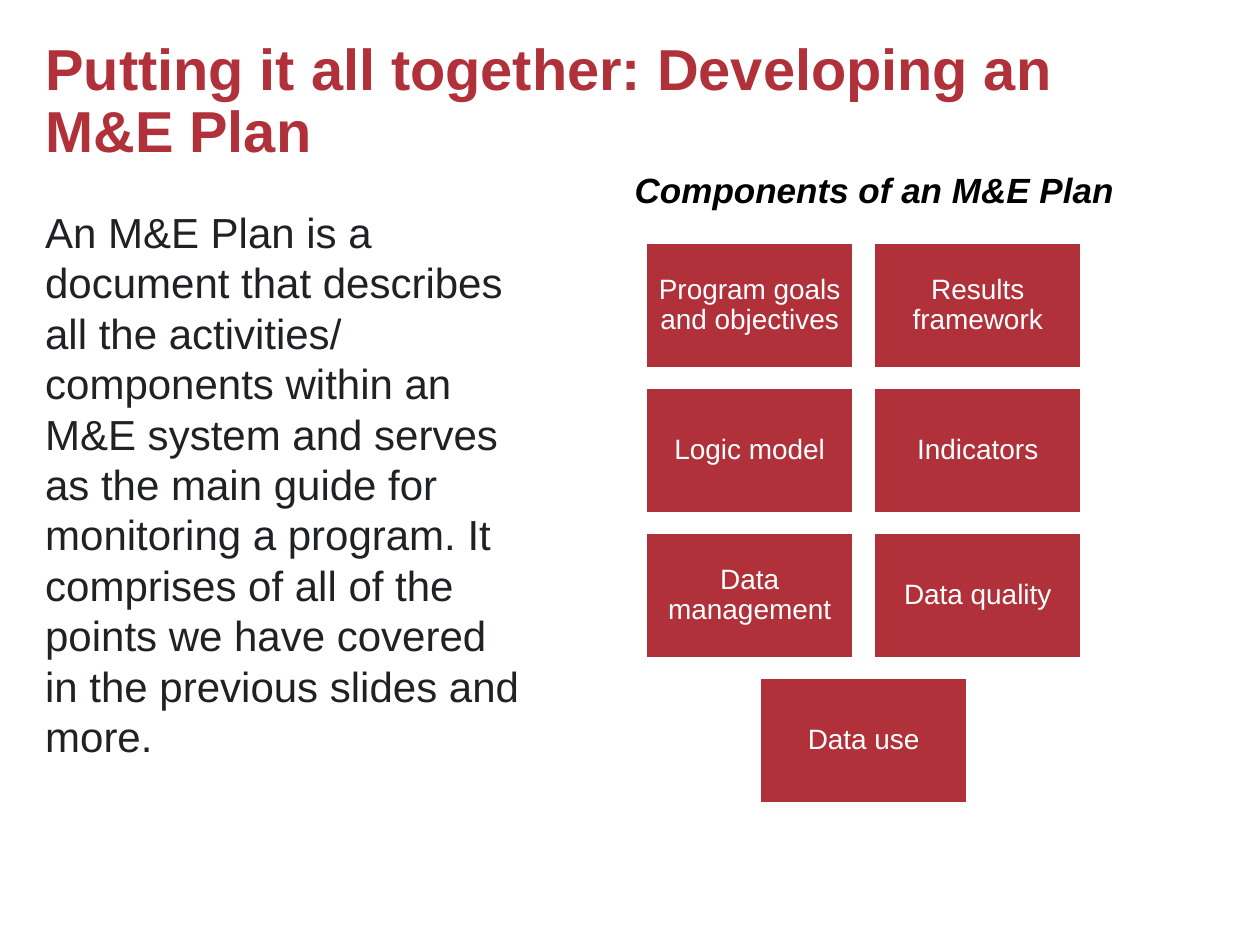
from pptx import Presentation
from pptx import util as u
from pptx.dml import color
from pptx.enum import shapes, text

COLORS = {"red": "B03139", "ink": "202124", "black": "000000", "white": "FFFFFF"}
FONT = "Arial"

COMPONENT_ROWS = [
    ["Program goals and objectives", "Results framework"],
    ["Logic model", "Indicators"],
    ["Data management", "Data quality"],
    ["Data use"],
]
CARD_WIDTH, CARD_HEIGHT = 1.64, 0.99
COLUMN_STEP, ROW_STEP = 1.81, 1.15
GRID_CENTER, GRID_TOP = 6.855, 1.93

DESCRIPTION = (
    "An M&E Plan is a document that describes all the activities/ "
    "components within an M&E system and serves as the main guide for "
    "monitoring a program. It comprises of all of the points we have "
    "covered in the previous slides and more."
)


def rgb(name):
    return color.RGBColor.from_string(COLORS[name])


def inches(*lengths):
    return [u.Inches(length) for length in lengths]


def write_text(shape, words, size, ink, bold=False, italic=False,
               align=text.PP_ALIGN.LEFT, anchor=text.MSO_ANCHOR.TOP,
               spacing=None, fit=text.MSO_AUTO_SIZE.NONE):
    frame = shape.text_frame
    frame.word_wrap = True
    frame.auto_size = fit
    frame.vertical_anchor = anchor
    para = frame.paragraphs[0]
    para.alignment = align
    para.line_spacing = spacing
    span = para.add_run()
    span.text = words
    span.font.name = FONT
    span.font.size = u.Pt(size)
    span.font.bold = bold
    span.font.italic = italic
    span.font.color.rgb = rgb(ink)


def set_title(page, words):
    title = page.shapes.title
    title.left, title.top, title.width, title.height = inches(0.26, 0.27, 8.62, 1.45)
    write_text(title, words, 33, "red", bold=True, spacing=0.9)


def add_text(page, words, place, **style):
    box = page.shapes.add_textbox(*inches(*place))
    write_text(box, words, fit=text.MSO_AUTO_SIZE.SHAPE_TO_FIT_TEXT, **style)


def add_card(page, words, left, top):
    card = page.shapes.add_shape(
        shapes.MSO_SHAPE.RECTANGLE, *inches(left, top, CARD_WIDTH, CARD_HEIGHT))
    card.shadow.inherit = False
    card.fill.solid()
    card.fill.fore_color.rgb = rgb("red")
    card.line.color.rgb = rgb("white")
    card.line.width = u.Pt(1)
    frame = card.text_frame
    frame.margin_left = frame.margin_right = u.Inches(0.07)
    frame.margin_top = frame.margin_bottom = u.Inches(0.07)
    write_text(card, words, 16, "white", align=text.PP_ALIGN.CENTER,
               anchor=text.MSO_ANCHOR.MIDDLE, spacing=0.9)


def add_component_grid(page):
    for row, names in enumerate(COMPONENT_ROWS):
        row_width = CARD_WIDTH + COLUMN_STEP * (len(names) - 1)
        for column, name in enumerate(names):
            left = GRID_CENTER - row_width / 2 + column * COLUMN_STEP
            add_card(page, name, left, GRID_TOP + row * ROW_STEP)


def main():
    deck = Presentation()
    deck.slide_width, deck.slide_height = inches(10, 7.5)
    page = deck.slides.add_slide(deck.slide_layouts.get_by_name("Title Only"))
    set_title(page, "Putting it all together: Developing an M&E Plan")
    add_text(page, DESCRIPTION, (0.26, 1.59, 3.98, 4.54), size=24, ink="ink")
    add_text(page, "Components of an M&E Plan", (4.81, 1.29, 4.26, 0.44),
             size=20, ink="black", bold=True, italic=True,
             align=text.PP_ALIGN.CENTER)
    add_component_grid(page)
    deck.save("out.pptx")


if __name__ == "__main__":
    main()
